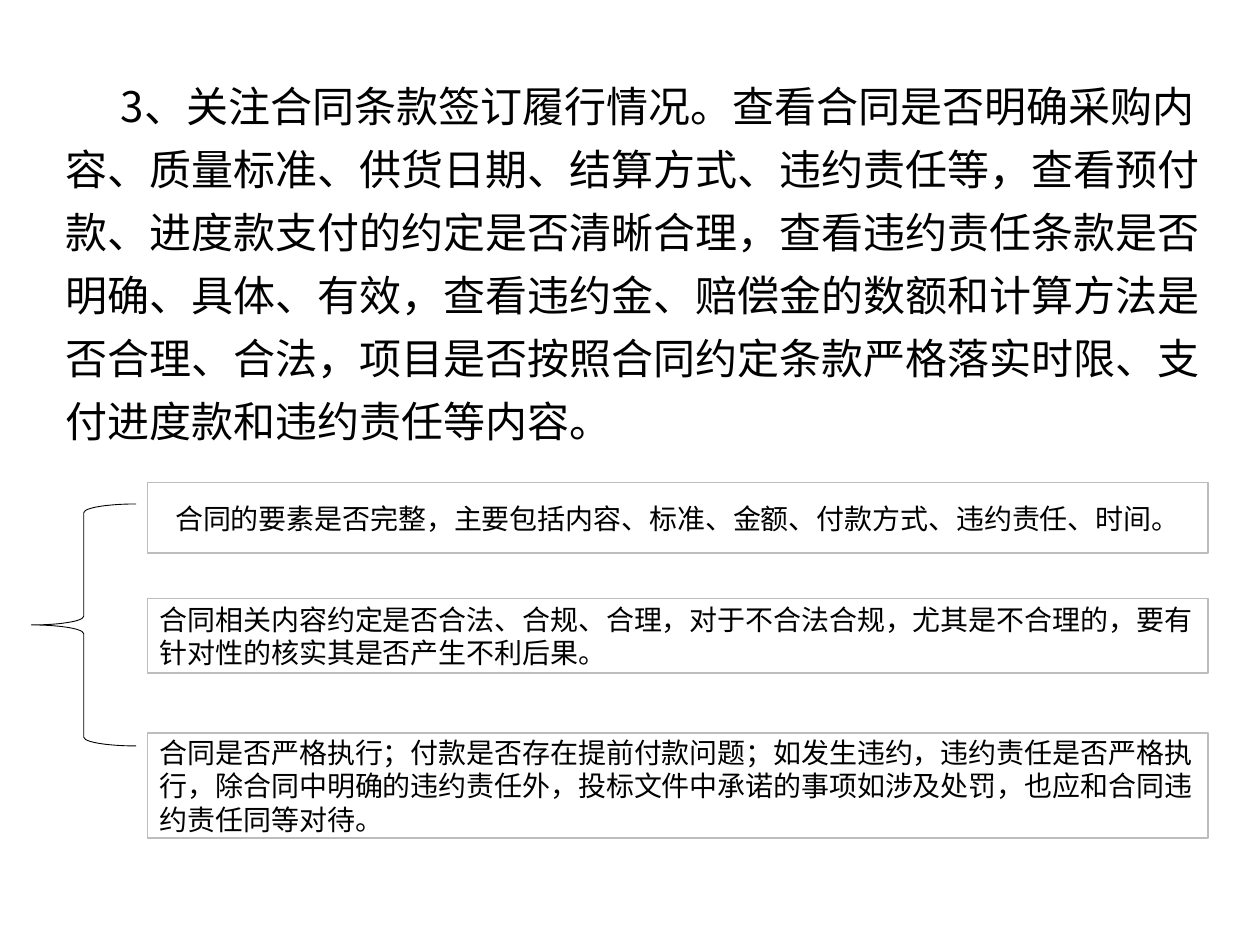
from dataclasses import dataclass

from lxml import etree
from pptx import Presentation
from pptx import util as u
from pptx.dml.color import RGBColor
from pptx.enum import shapes, text
from pptx.oxml import ns

COLORS = {"text": "000000", "brace": "000000", "fill": "FFFFFF", "border": "BDBDBD"}
EAST_ASIAN_FONT = "Noto Sans CJK SC"
BOX_LEFT, BOX_WIDTH = 84.24, 606.24


@dataclass
class CheckBox:
    top: float
    height: float
    wording: str
    alignment: text.PP_ALIGN = text.PP_ALIGN.LEFT


CHECKS = [
    CheckBox(275.76, 40.32,
             "合同的要素是否完整，主要包括内容、标准、金额、付款方式、违约责任、时间。",
             text.PP_ALIGN.CENTER),
    CheckBox(342, 42.48,
             "合同相关内容约定是否合法、合规、合理，对于不合法合规，尤其是不合理的，"
             "要有针对性的核实其是否产生不利后果。"),
    CheckBox(419.04, 59.76,
             "合同是否严格执行；付款是否存在提前付款问题；如发生违约，违约责任是否严格执行，"
             "除合同中明确的违约责任外，投标文件中承诺的事项如涉及处罚，也应和合同违约责任同等对待。"),
]
INTRODUCTION = (
    "3、关注合同条款签订履行情况。查看合同是否明确采购内容、质量标准、供货日期、结算方式、"
    "违约责任等，查看预付款、进度款支付的约定是否清晰合理，查看违约责任条款是否明确、具体、有效，"
    "查看违约金、赔偿金的数额和计算方法是否合理、合法，项目是否按照合同约定条款严格落实时限、"
    "支付进度款和违约责任等内容。"
)


def color(name: str) -> RGBColor:
    return RGBColor.from_string(COLORS[name])


def write(paragraph, wording: str, size: float, font_name: str) -> None:
    run = paragraph.add_run()
    run.text = wording
    paragraph.font.size = u.Pt(size)
    paragraph.font.name = font_name
    paragraph.font.color.rgb = color("text")
    # The East Asian typeface has no public setter
    east_asian = etree.SubElement(run.font._element, ns.qn("a:ea"))
    east_asian.set("typeface", EAST_ASIAN_FONT)


def add_introduction(slide) -> None:
    box = slide.shapes.add_textbox(u.Pt(30.24), u.Pt(35.28), u.Pt(676.08), u.Pt(223.2))
    box.text_frame.word_wrap = True
    paragraph = box.text_frame.paragraphs[0]
    paragraph.line_spacing = u.Pt(36)
    paragraph._p.get_or_add_pPr().set("indent", str(u.Pt(31.68)))
    write(paragraph, INTRODUCTION, 24, EAST_ASIAN_FONT)


def add_brace(slide) -> None:
    brace = slide.shapes.add_shape(shapes.MSO_SHAPE.LEFT_BRACE,
                                   u.Pt(18), u.Pt(288), u.Pt(59.76), u.Pt(138.24))
    brace.shadow.inherit = False
    brace.fill.background()
    brace.line.color.rgb = color("brace")
    brace.line.width = u.Pt(0.5)


def add_check(slide, check: CheckBox) -> None:
    box = slide.shapes.add_shape(shapes.MSO_SHAPE.RECTANGLE, u.Pt(BOX_LEFT), u.Pt(check.top),
                                 u.Pt(BOX_WIDTH), u.Pt(check.height))
    box.shadow.inherit = False
    box.fill.solid()
    box.fill.fore_color.rgb = color("fill")
    box.line.color.rgb = color("border")
    box.line.width = u.Pt(1)
    box.text_frame.word_wrap = True
    box.text_frame.vertical_anchor = text.MSO_ANCHOR.MIDDLE
    paragraph = box.text_frame.paragraphs[0]
    paragraph.alignment = check.alignment
    write(paragraph, check.wording, 16, "Arial")


def main() -> None:
    presentation = Presentation()
    presentation.slide_width, presentation.slide_height = u.Pt(720), u.Pt(540)
    slide = presentation.slides.add_slide(presentation.slide_layouts[6])

    # Opening paragraph
    add_introduction(slide)

    # Brace and the three checks it groups
    add_brace(slide)
    for check in CHECKS:
        add_check(slide, check)

    presentation.save("out.pptx")


if __name__ == "__main__":
    main()
